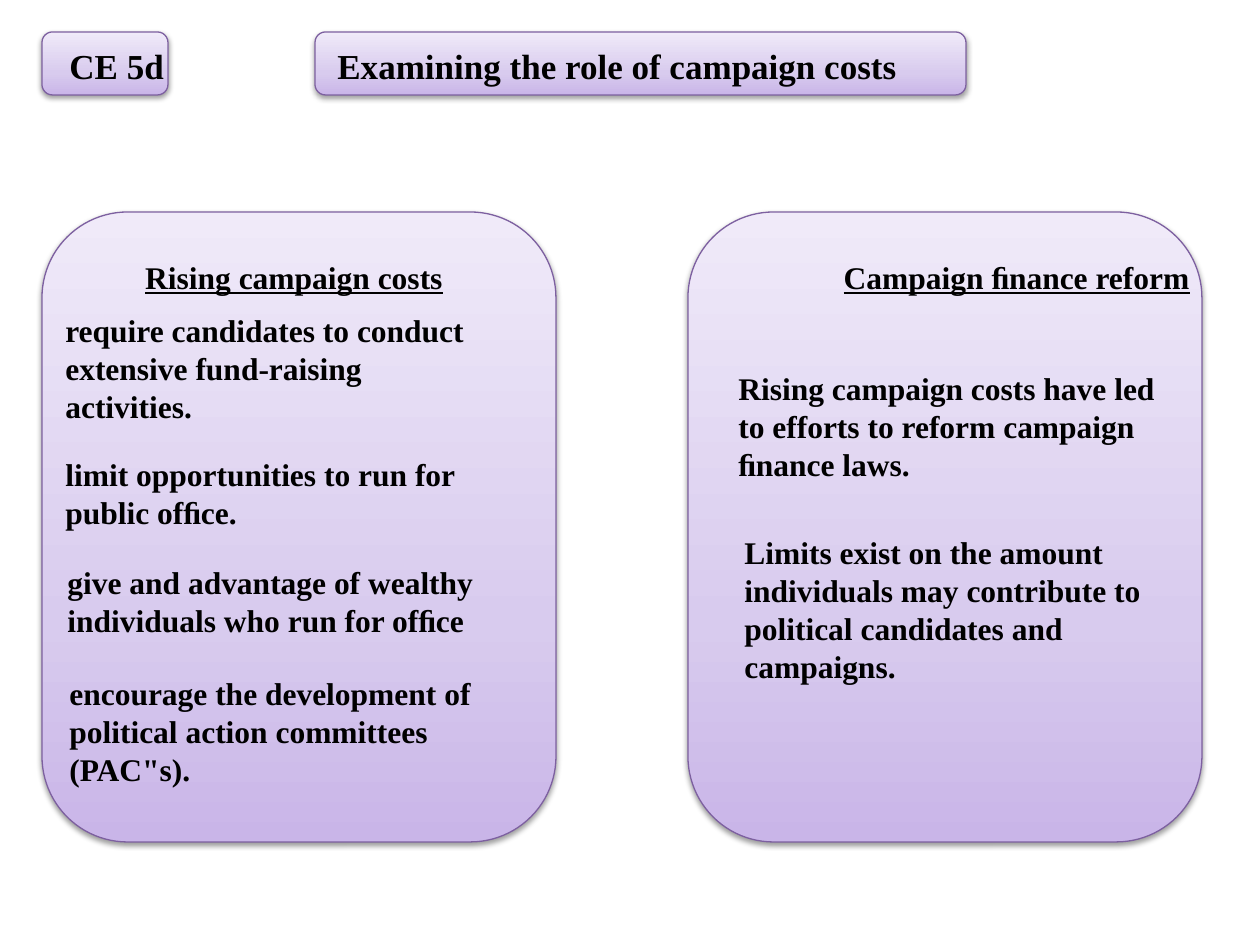
from lxml import etree
from pptx import Presentation
from pptx import util as u
from pptx.dml.color import RGBColor
from pptx.enum import shapes, text
from pptx.oxml.ns import qn

EMU_PER_PX = 914400 / 126
BLACK = RGBColor(0x00, 0x00, 0x00)
PURPLE = RGBColor(0x7D, 0x60, 0xA0)
LAVENDER_STOPS = (
    (0, RGBColor(0xC9, 0xB5, 0xE8)),
    (35, RGBColor(0xD8, 0xCB, 0xEE)),
    (100, RGBColor(0xF0, 0xEA, 0xF9)),
)


def px(*lengths):
    return [u.Emu(round(length * EMU_PER_PX)) for length in lengths]


def add_color(parent, color, alpha=None):
    element = etree.SubElement(parent, qn("a:srgbClr"), val=str(color))
    if alpha is not None:
        etree.SubElement(element, qn("a:alpha"), val=str(alpha * 1000))


def write_text(frame, content, size=18, underline=False,
               align=text.PP_ALIGN.LEFT, font="Times New Roman"):
    """Fill a text frame, one paragraph for each line of content."""
    for index, line in enumerate(content.split("\n")):
        paragraph = frame.add_paragraph() if index else frame.paragraphs[0]
        paragraph.alignment = align
        run = paragraph.add_run()
        run.text = line
        run.font.name = font
        run.font.size = u.Pt(size)
        run.font.bold = True
        run.font.underline = underline
        run.font.color.rgb = BLACK


class SlideBuilder:
    def __init__(self, slide):
        self.slide = slide

    def card(self, left, top, width, height):
        """Rounded box with a lavender gradient and a soft shadow."""
        shape = self.slide.shapes.add_shape(
            shapes.MSO_SHAPE.ROUNDED_RECTANGLE, *px(left, top, width, height))
        shape.line.color.rgb = PURPLE
        shape.line.width = u.Pt(0.75)

        # Three stops, from the bottom edge up
        shape.fill.gradient()
        shape.fill.gradient_angle = 90
        properties = shape.element.spPr
        stops = properties.find(".//" + qn("a:gsLst"))
        for stop in list(stops):
            stops.remove(stop)
        for position, color in LAVENDER_STOPS:
            stop = etree.SubElement(stops, qn("a:gs"), pos=str(position * 1000))
            add_color(stop, color)

        # Shadow straight below
        shape.shadow.inherit = False
        shadow = etree.SubElement(
            properties.find(qn("a:effectLst")), qn("a:outerShdw"),
            blurRad="40000", dist="20000", dir="5400000", rotWithShape="0")
        add_color(shadow, BLACK, alpha=38)

    def label(self, left, top, width, height, content, **style):
        box = self.slide.shapes.add_textbox(*px(left, top, width, height))
        box.text_frame.word_wrap = True
        box.text_frame.auto_size = text.MSO_AUTO_SIZE.SHAPE_TO_FIT_TEXT
        write_text(box.text_frame, content, **style)


def main():
    presentation = Presentation()
    presentation.slide_width, presentation.slide_height = px(1260, 945)
    slide = presentation.slides.add_slide(presentation.slide_layouts[6])
    builder = SlideBuilder(slide)

    # Header: standard code and title
    builder.card(42, 32, 126, 63)
    builder.label(57, 38, 220, 55, "CE 5d", size=20)
    builder.card(315, 32, 651, 63)
    builder.label(325, 38, 620, 55, "Examining the role of campaign costs", size=20)

    # Left panel: rising costs
    builder.card(42, 212, 514, 630)
    builder.label(105, 252, 378, 50, "Rising campaign costs",
                  underline=True, align=text.PP_ALIGN.CENTER)
    effects = (
        (53, 305, 127, "require candidates to conduct\nextensive fund-raising\nactivities."),
        (53, 449, 89, "limit opportunities to run for\npublic ofﬁce."),
        (55, 557, 89, "give and advantage of wealthy\nindividuals who run for ofﬁce"),
        (57, 668, 127, "encourage the development of\npolitical action committees\n(PAC\"s)."),
    )
    for left, top, height, content in effects:
        builder.label(left, top, 503, height, content)

    # Right panel: reform
    builder.card(688, 212, 514, 630)
    builder.label(699, 252, 503, 50, "Campaign ﬁnance reform",
                  underline=True, align=text.PP_ALIGN.RIGHT)
    reforms = (
        (726, 363, 127, "Rising campaign costs have led\nto efforts to reform campaign\nﬁnance laws."),
        (732, 527, 165, "Limits exist on the amount\nindividuals may contribute to\n"
                        "political candidates and\ncampaigns."),
    )
    for left, top, height, content in reforms:
        builder.label(left, top, 503, height, content)

    presentation.save("out.pptx")


if __name__ == "__main__":
    main()
